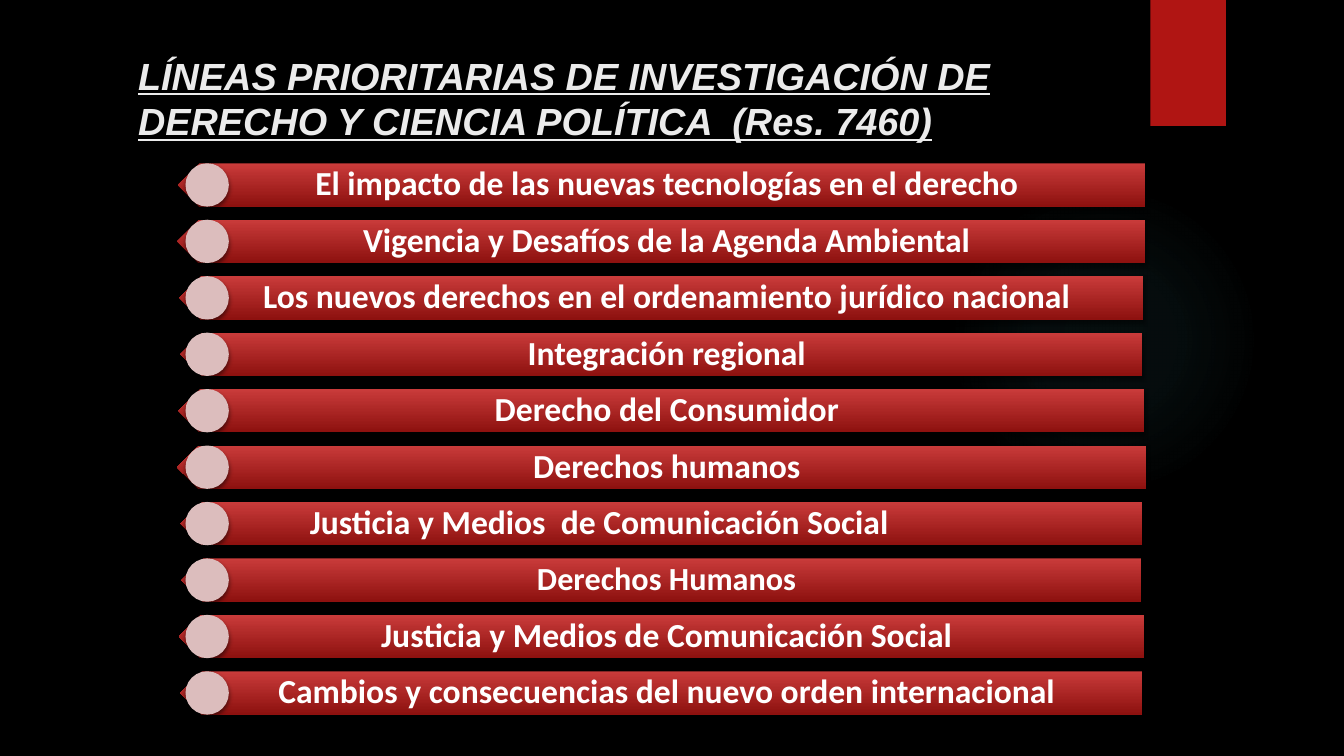
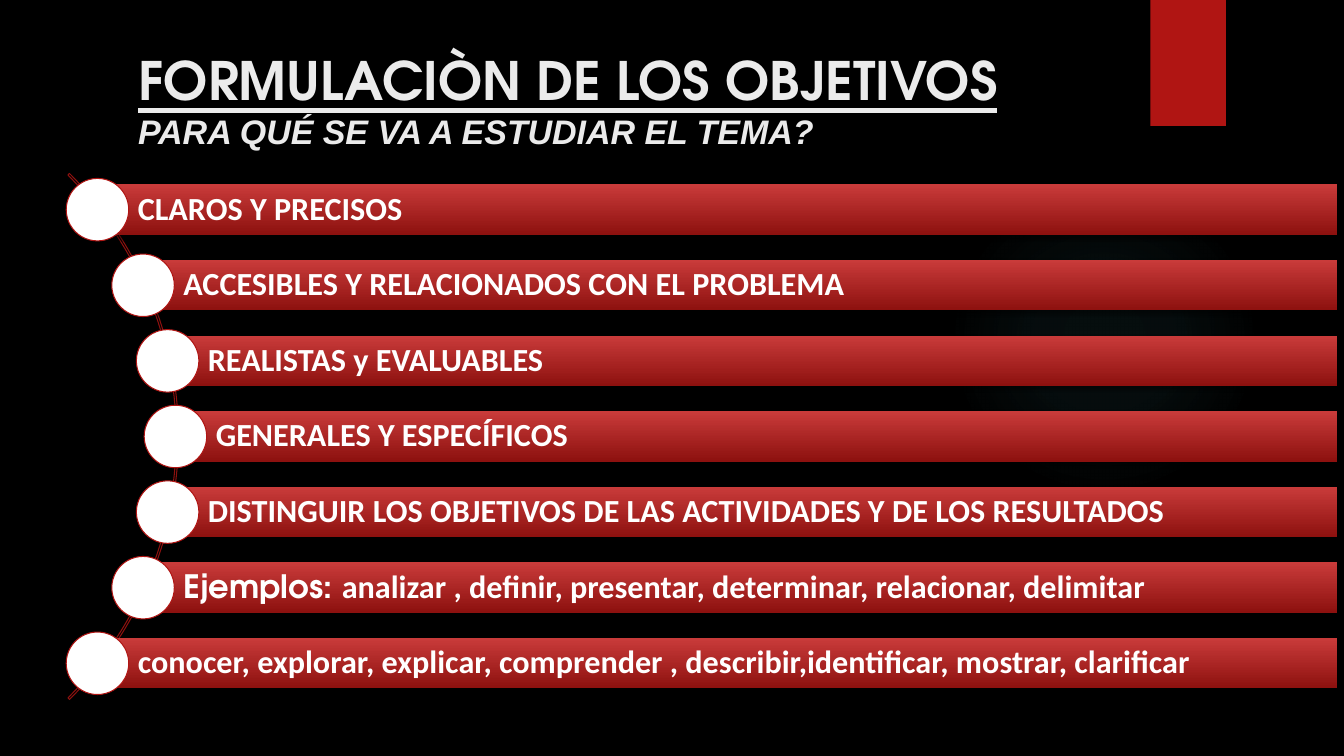
"""Build two slides on research lines and the wording of objectives."""
import math

from pptx import Presentation
from pptx import util as u
from pptx.dml.color import RGBColor
from pptx.enum import shapes, text
from pptx.oxml import parse_xml
from pptx.oxml.ns import nsdecls, qn

BLACK = RGBColor(0x00, 0x00, 0x00)
WHITE = RGBColor(0xFF, 0xFF, 0xFF)
TITLE_GRAY = RGBColor(0xEB, 0xEB, 0xEB)
ACCENT_RED = RGBColor(0xB0, 0x15, 0x13)
LIGHT_RED = RGBColor(0xC9, 0x3B, 0x3A)
DARK_RED = RGBColor(0x8D, 0x11, 0x0F)
PINK = RGBColor(0xDC, 0xBD, 0xBD)
GLOW_TEAL = RGBColor(0x50, 0xB9, 0xC1)

ARIAL = "Arial"
CALIBRI = "Calibri"
ADVENTOR = "TeX Gyre Adventor"
SHAPE = shapes.MSO_SHAPE

RESEARCH_LINES = [
    ("El impacto de las nuevas tecnologías en el derecho", 9.59),
    ("Vigencia y Desafíos de la Agenda Ambiental", 9.6),
    ("Los nuevos derechos en el ordenamiento jurídico nacional", 9.56),
    ("Integración regional", 9.54),
    ("Derecho del Consumidor", 9.58),
    ("Derechos humanos", 9.61),
    ("Justicia y Medios  de Comunicación Social", 9.54),
    ("Derechos Humanos", 9.52),
    ("Justicia y Medios de Comunicación Social", 9.57),
    ("Cambios y consecuencias del nuevo orden internacional", 9.54),
]
SHIFTED_LINE = 6
SMALLER_LINE = 7

OBJECTIVES = [
    [("CLAROS Y PRECISOS", CALIBRI)],
    [("ACCESIBLES Y RELACIONADOS CON EL PROBLEMA", CALIBRI)],
    [("REALISTAS y EVALUABLES", CALIBRI)],
    [("GENERALES Y ESPECÍFICOS", CALIBRI)],
    [("DISTINGUIR LOS OBJETIVOS DE LAS ACTIVIDADES Y DE LOS RESULTADOS", CALIBRI)],
    [("Ejemplos: ", ADVENTOR),
     ("analizar , definir, presentar, determinar, relacionar, delimitar", CALIBRI)],
    [("conocer, explorar, explicar, comprender , describir,identificar, mostrar, clarificar",
      CALIBRI)],
]


def add_plain_shape(slide, kind, left, top, width, height, fill=None, line=None):
    """Add a preset shape with an optional solid fill and thin outline."""
    shape = slide.shapes.add_shape(
        kind, u.Inches(left), u.Inches(top), u.Inches(width), u.Inches(height))
    shape.shadow.inherit = False
    if fill is None:
        shape.fill.background()
    else:
        shape.fill.solid()
        shape.fill.fore_color.rgb = fill
    if line is None:
        shape.line.fill.background()
    else:
        shape.line.color.rgb = line
        shape.line.width = u.Pt(0.75)
    return shape


def add_shadow(shape):
    """Give a shape the soft shadow below it."""
    effects = shape._element.spPr.find(qn("a:effectLst"))
    effects.append(parse_xml(
        f'<a:outerShdw {nsdecls("a")} blurRad="38100" dist="25400" dir="5400000">'
        '<a:srgbClr val="000000"><a:alpha val="45000"/></a:srgbClr></a:outerShdw>'))


def add_glow(slide):
    """Add the faint round glow behind the content."""
    glow = add_plain_shape(slide, SHAPE.OVAL, 9.41, 1.83, 3.08, 3.08, GLOW_TEAL)
    stops = "".join(
        f'<a:gs pos="{position}000"><a:srgbClr val="{GLOW_TEAL}">'
        f'<a:alpha val="{alpha}000"/></a:srgbClr></a:gs>'
        for position, alpha in ((0, 7), (36, 6), (69, 0)))
    gradient = parse_xml(
        f'<a:gradFill {nsdecls("a")}><a:gsLst>{stops}</a:gsLst><a:path path="circle">'
        '<a:fillToRect l="50000" t="50000" r="50000" b="50000"/></a:path></a:gradFill>')
    properties = glow._element.spPr
    properties.replace(properties.find(qn("a:solidFill")), gradient)


def add_bar(slide, kind, left, top, width, height, runs, size, insets, alignment):
    """Add a red gradient bar holding one line of bold text."""
    bar = add_plain_shape(slide, kind, left, top, width, height)
    bar.fill.gradient()
    bar.fill.gradient_angle = 270
    for stop, color in zip(bar.fill.gradient_stops, (LIGHT_RED, DARK_RED)):
        stop.color.rgb = color
    add_shadow(bar)
    frame = bar.text_frame
    frame.word_wrap = True
    frame.vertical_anchor = text.MSO_ANCHOR.MIDDLE
    frame.margin_left, frame.margin_right = map(u.Inches, insets)
    frame.margin_top = frame.margin_bottom = 0
    paragraph = frame.paragraphs[0]
    paragraph.alignment = alignment
    paragraph.line_spacing = 0.9
    for words, font in runs:
        run = paragraph.add_run()
        run.text = words
        run.font.name = font
        run.font.size = u.Pt(size)
        run.font.bold = True
        run.font.color.rgb = WHITE
    return bar


def add_titled_slide(presentation, top, width, lines):
    """Add a slide with the shared decoration and a title of styled lines."""
    slide = presentation.slides.add_slide(presentation.slide_layouts[5])
    add_glow(slide)
    add_shadow(add_plain_shape(slide, SHAPE.RECTANGLE, 11.41, 0, 0.75, 1.25, ACCENT_RED))
    title = slide.shapes.title
    title.left, title.top = u.Inches(1.27), u.Inches(top)
    title.width, title.height = u.Inches(width), u.Inches(1.15)
    frame = title.text_frame
    frame.text = "\n".join(words for words, *_ in lines)
    frame.word_wrap = True
    frame.auto_size = text.MSO_AUTO_SIZE.NONE
    frame.vertical_anchor = text.MSO_ANCHOR.TOP
    for paragraph, (_, font, size, italic, underline) in zip(frame.paragraphs, lines):
        paragraph.alignment = text.PP_ALIGN.LEFT
        for run in paragraph.runs:
            run.font.name = font
            run.font.size = u.Pt(size)
            run.font.bold = True
            run.font.italic = italic
            run.font.underline = underline
            run.font.color.rgb = TITLE_GRAY
    return slide


def add_research_lines(slide):
    """Stack the arrow bars, each with a disk over its tip."""
    center, first_top, pitch, height = 6.56, 1.62, 0.56, 0.43
    for index, (words, width) in enumerate(RESEARCH_LINES):
        top = first_top + index * pitch
        size = 23 if index == SMALLER_LINE else 24
        insets = (0.19, 1.53 if index == SHIFTED_LINE else 0.19)
        bar = add_bar(slide, SHAPE.PENTAGON, center - width / 2, top, width, height,
                      [(words, CALIBRI)], size, insets, text.PP_ALIGN.CENTER)
        bar._element.spPr.xfrm.set("flipH", "1")
        add_shadow(add_plain_shape(slide, SHAPE.OVAL, 1.84, top, height, height, PINK))


def add_objectives(slide):
    """Set the objective bars along an arc, each starting at a disk."""
    center_x, center_y, radius, pitch = -1.92, 4.33, 3.66, 0.75
    bar_right, bar_height, disk, arc_size = 13.26, 0.5, 0.62, 7.38
    arc = add_plain_shape(slide, SHAPE.BLOCK_ARC, center_x - arc_size / 2,
                          center_y - arc_size / 2, arc_size, arc_size, line=DARK_RED)
    for index, value in enumerate((189, 27, 0.003)):
        arc.adjustments[index] = value
    for index, runs in enumerate(OBJECTIVES):
        offset = (index - len(OBJECTIVES) // 2) * pitch
        left = center_x + math.sqrt(radius ** 2 - offset ** 2)
        middle = center_y + offset
        add_bar(slide, SHAPE.RECTANGLE, left, middle - bar_height / 2, bar_right - left,
                bar_height, runs, 23, (0.4, 0.06), text.PP_ALIGN.LEFT)
        add_plain_shape(slide, SHAPE.OVAL, left - disk / 2, middle - disk / 2,
                        disk, disk, WHITE, ACCENT_RED)


def main():
    """Build and save the presentation."""
    presentation = Presentation()
    presentation.slide_width = u.Inches(13.33)
    presentation.slide_height = u.Inches(7.5)
    background = presentation.slide_master.background.fill
    background.solid()
    background.fore_color.rgb = BLACK
    add_research_lines(add_titled_slide(presentation, 0.47, 9.8, [
        ("LÍNEAS PRIORITARIAS DE INVESTIGACIÓN DE DERECHO Y CIENCIA POLÍTICA  (Res. 7460)",
         ARIAL, 27, True, True)]))
    add_objectives(add_titled_slide(presentation, 0.42, 10.8, [
        ("FORMULACIÒN DE LOS OBJETIVOS", ADVENTOR, 37.8, False, True),
        ("PARA QUÉ SE VA A ESTUDIAR EL TEMA?", ARIAL, 24.3, True, False)]))
    presentation.save("out.pptx")


if __name__ == "__main__":
    main()
